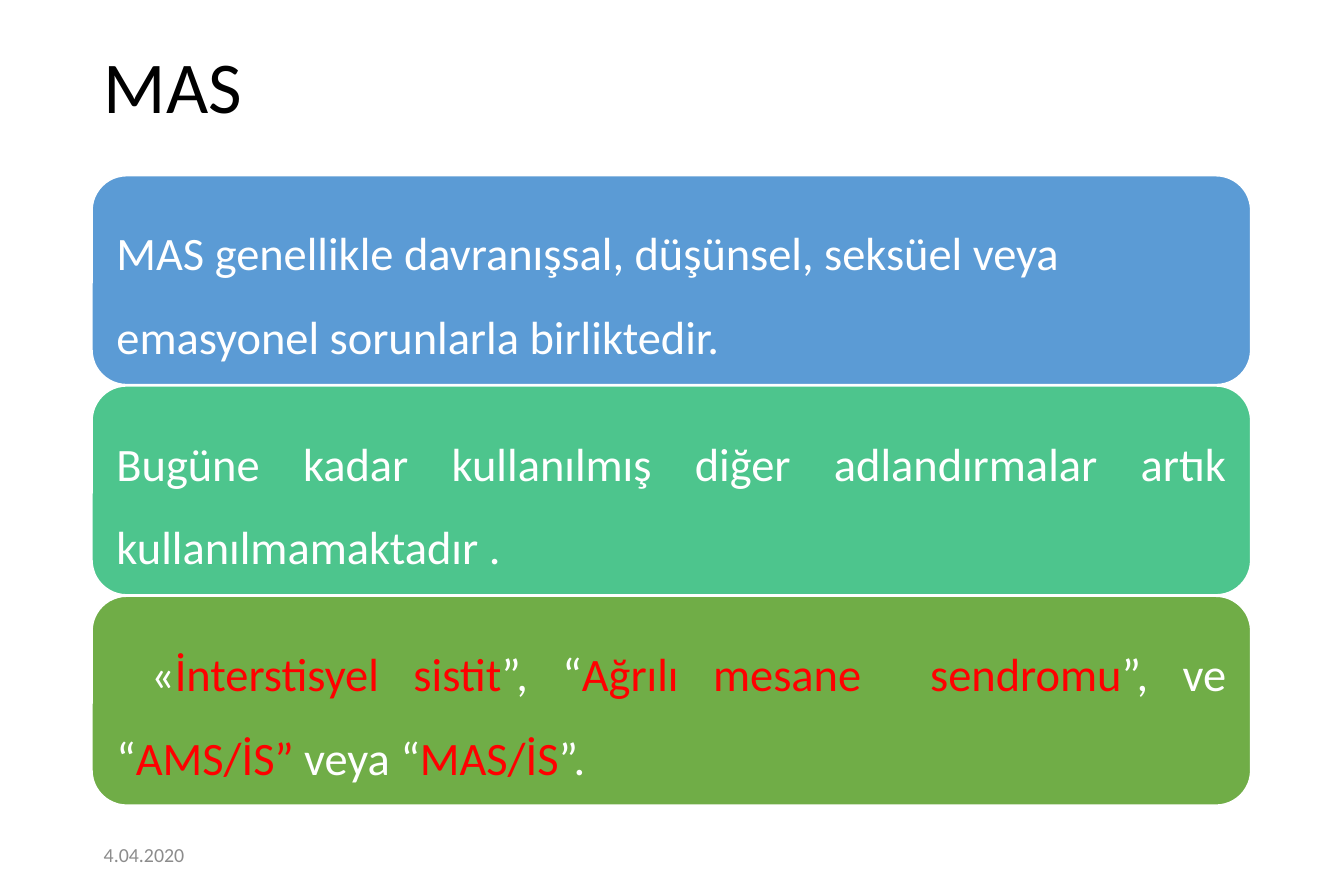
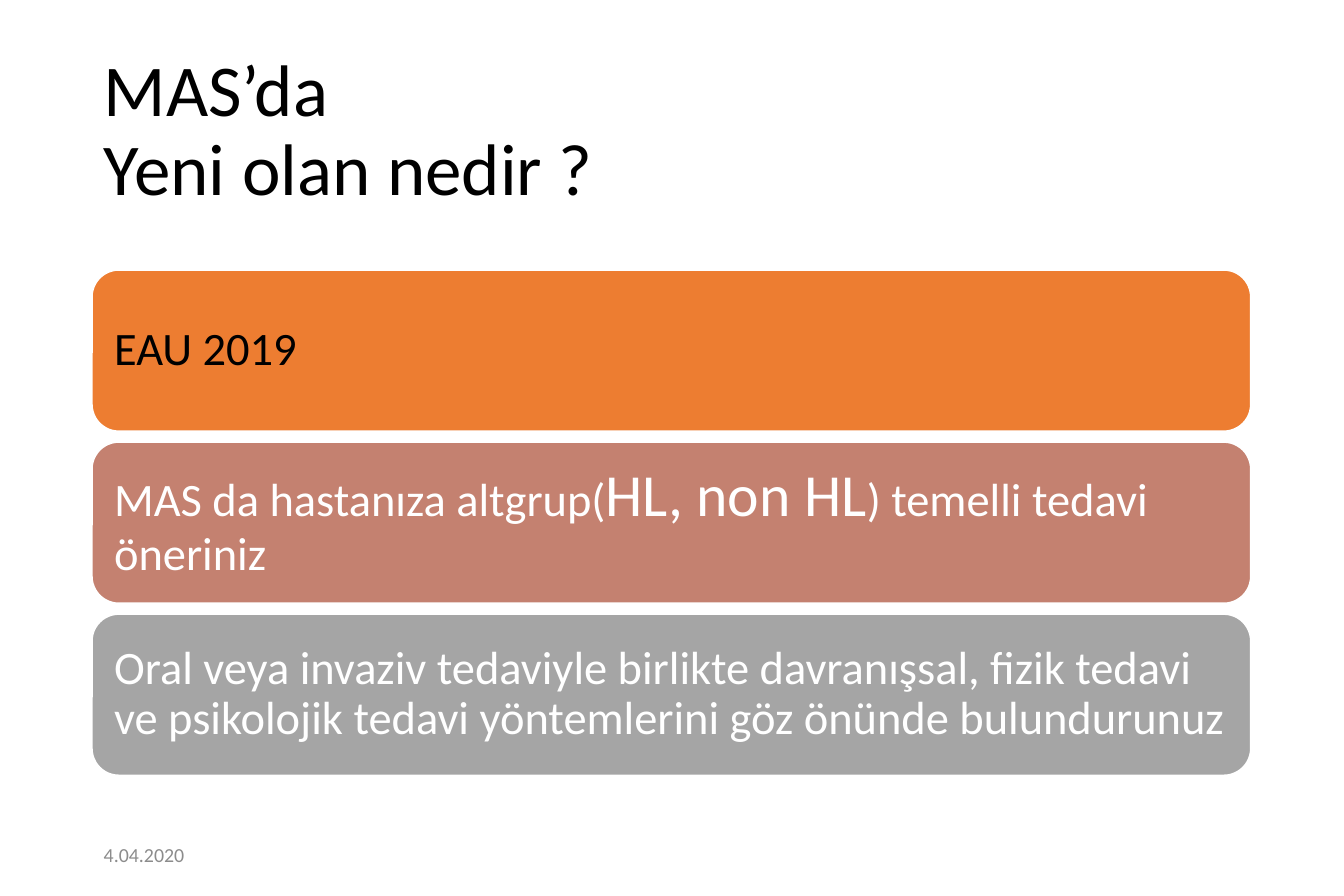
import pptx
import pptx.dml.color
import pptx.enum.shapes
import pptx.enum.text
import pptx.util

PIXEL = pptx.util.Inches(1) // 100
FONT = "Calibri"
LEFT = 77
WIDTH = 970
TITLE_ONLY_LAYOUT = 5

BLACK = pptx.dml.color.RGBColor(0x00, 0x00, 0x00)
WHITE = pptx.dml.color.RGBColor(0xFF, 0xFF, 0xFF)
RED = pptx.dml.color.RGBColor(0xFF, 0x00, 0x00)
DATE_GRAY = pptx.dml.color.RGBColor(0x8C, 0x8C, 0x8C)
BLUE = pptx.dml.color.RGBColor(0x5B, 0x9B, 0xD5)
TEAL = pptx.dml.color.RGBColor(0x4D, 0xC5, 0x8D)
GREEN = pptx.dml.color.RGBColor(0x70, 0xAD, 0x47)
ORANGE = pptx.dml.color.RGBColor(0xED, 0x7D, 0x31)
ROSE = pptx.dml.color.RGBColor(0xC4, 0x81, 0x70)
GRAY = pptx.dml.color.RGBColor(0xA5, 0xA5, 0xA5)

ALIGN = pptx.enum.text.PP_ALIGN
ANCHOR = pptx.enum.text.MSO_ANCHOR


def px(value):
    """Turn layout pixels into EMU."""
    return value * PIXEL


def write_text(paragraph, text, *, size=28, colour=WHITE):
    """Append text to a paragraph, with line breaks at newlines."""
    for index, line in enumerate(text.split("\n")):
        if index:
            paragraph.add_line_break()
        run = paragraph.add_run()
        run.text = line
        run.font.name = FONT
        run.font.size = pptx.util.Pt(size)
        run.font.color.rgb = colour


def prepare_paragraph(shape, *, anchor=ANCHOR.MIDDLE, align=ALIGN.LEFT, spacing=1.0):
    """Set up the text frame of a shape and return its first paragraph."""
    frame = shape.text_frame
    frame.auto_size = pptx.enum.text.MSO_AUTO_SIZE.NONE
    frame.word_wrap = True
    frame.vertical_anchor = anchor
    paragraph = frame.paragraphs[0]
    paragraph.alignment = align
    paragraph.line_spacing = spacing
    return paragraph


def add_band(slide, top, height, fill, pieces, *, align, spacing):
    """Add a rounded band with its formatted pieces of text."""
    band = slide.shapes.add_shape(
        pptx.enum.shapes.MSO_SHAPE.ROUNDED_RECTANGLE,
        px(LEFT), px(top), px(WIDTH), px(height))
    band.shadow.inherit = False
    band.fill.solid()
    band.fill.fore_color.rgb = fill
    band.line.color.rgb = WHITE
    band.line.width = pptx.util.Pt(1)
    frame = band.text_frame
    frame.margin_left = frame.margin_right = px(12)
    frame.margin_top = frame.margin_bottom = px(12)
    paragraph = prepare_paragraph(band, align=align, spacing=spacing)
    for text, text_format in pieces:
        write_text(paragraph, text, **text_format)


def add_bands(slide, bands, *, top, height, pitch, spacing):
    """Stack bands at an equal pitch."""
    for index, (fill, align, pieces) in enumerate(bands):
        add_band(slide, top + index * pitch, height, fill, pieces,
                 align=align, spacing=spacing)


def add_slide(presentation, title_text, title_top):
    """Add a slide with the shared title style and date."""
    slide = presentation.slides.add_slide(
        presentation.slide_layouts[TITLE_ONLY_LAYOUT])
    title = slide.shapes.title
    title.left, title.top = px(LEFT), px(title_top)
    title.width, title.height = px(WIDTH), px(145)
    paragraph = prepare_paragraph(title, anchor=ANCHOR.TOP, spacing=0.9)
    write_text(paragraph, title_text, size=44, colour=BLACK)
    date = slide.shapes.add_textbox(px(LEFT), px(695), px(253), px(40))
    write_text(prepare_paragraph(date), "4.04.2020", size=12, colour=DATE_GRAY)
    return slide


def main():
    """Build both slides and save the presentation."""
    presentation = pptx.Presentation()
    presentation.slide_width = px(1125)
    presentation.slide_height = px(750)

    red = {"colour": RED}
    definition_bands = [
        (BLUE, ALIGN.LEFT, [
            ("MAS genellikle davranışsal, düşünsel, seksüel veya "
             "emasyonel sorunlarla birliktedir.", {})]),
        (TEAL, ALIGN.JUSTIFY, [
            ("Bugüne kadar kullanılmış diğer adlandırmalar artık "
             "kullanılmamaktadır .", {})]),
        (GREEN, ALIGN.JUSTIFY, [
            (" «", {}), ("İnterstisyel sistit", red), ("”, “", {}),
            ("Ağrılı mesane  sendromu", red), ("”, ve “", {}),
            ("AMS/İS” ", red), ("veya “", {}), ("MAS/İS", red), ("”.", {})]),
    ]
    slide = add_slide(presentation, "MAS", 37)
    add_bands(slide, definition_bands, top=147, height=175, pitch=176, spacing=1.5)

    news_bands = [
        (ORANGE, ALIGN.LEFT, [("EAU 2019", {"colour": BLACK})]),
        (ROSE, ALIGN.LEFT, [
            ("MAS da hastanıza altgrup(", {}), ("HL, non HL", {"size": 36}),
            (") temelli tedavi öneriniz", {})]),
        (GRAY, ALIGN.LEFT, [
            ("Oral veya invaziv tedaviyle birlikte davranışsal, fizik tedavi "
             "ve psikolojik tedavi yöntemlerini göz önünde bulundurunuz", {})]),
    ]
    slide = add_slide(presentation, "MAS’da\nYeni olan nedir ?", 40)
    add_bands(slide, news_bands, top=226, height=135, pitch=144, spacing=0.9)

    presentation.save("out.pptx")


if __name__ == "__main__":
    main()
